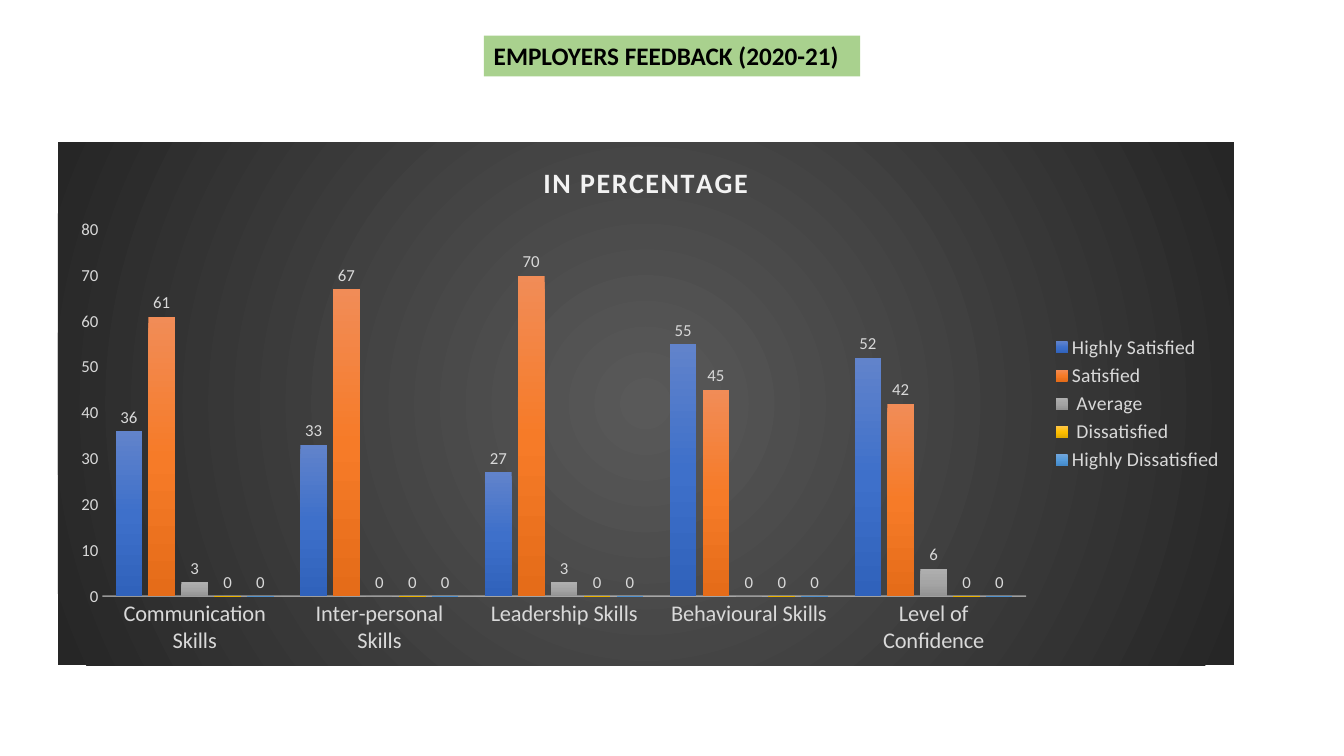
import pptx
import pptx.chart.data
import pptx.dml.color
import pptx.enum.chart
import pptx.enum.shapes
import pptx.enum.text
import pptx.oxml
import pptx.oxml.ns
import pptx.util

FONT = "Calibri"
PALE_GREY = "D9D9D9"
AXIS_GREY = "F2F2F2"
SLIDE_WIDTH = pptx.util.Inches(13.33)
SLIDE_HEIGHT = pptx.util.Inches(7.5)
NAMESPACES = pptx.oxml.ns.nsdecls("a", "c")

SKILLS = ["Communication Skills", "Inter-personal Skills", "Leadership Skills",
          "Behavioural Skills", "Level of Confidence"]
RATINGS = [
    ("Highly Satisfied", (36, 33, 27, 55, 52), ("6183CB", "3E70CA", "3062BB")),
    ("Satisfied", (61, 67, 70, 45, 42), ("F18C57", "F67B28", "E56C19")),
    (" Average", (3, 0, 3, 0, 6), ("AFAFAF", "A5A5A5", "939393")),
    (" Dissatisfied", (0, 0, 0, 0, 0), ("FFC64B", "FFC000", "E3AB00")),
    ("Highly Dissatisfied", (0, 0, 0, 0, 0), ("71A6DB", "559BDB", "448ACA")),
]


def color(value):
    return pptx.dml.color.RGBColor.from_string(value)


def share_box(left, top, width, height):
    return (int(left * SLIDE_WIDTH), int(top * SLIDE_HEIGHT),
            int(width * SLIDE_WIDTH), int(height * SLIDE_HEIGHT))


def format_font(font, size, fill=PALE_GREY, bold=False):
    font.name = FONT
    font.size = pptx.util.Pt(size)
    font.bold = bold
    font.color.rgb = color(fill)


def write_text(text_frame, text, **font_format):
    paragraph = text_frame.paragraphs[0]
    run = paragraph.add_run()
    run.text = text
    format_font(run.font, **font_format)
    return paragraph, run


def gradient_fill(colors, direction):
    last = len(colors) - 1
    stops = "".join(
        f'<a:gs pos="{100000 * index // last}"><a:srgbClr val="{value}"/></a:gs>'
        for index, value in enumerate(colors))
    return pptx.oxml.parse_xml(
        f'<a:gradFill {NAMESPACES} rotWithShape="1"><a:gsLst>{stops}</a:gsLst>'
        f'{direction}</a:gradFill>')


def fill_chart_background(chart):
    properties = pptx.oxml.parse_xml(
        f'<c:spPr {NAMESPACES}><a:ln><a:noFill/></a:ln></c:spPr>')
    center = ('<a:path path="circle">'
              '<a:fillToRect l="50000" t="50000" r="50000" b="50000"/></a:path>')
    properties.insert(0, gradient_fill(("595959", "262626"), center))
    chart.element.find(pptx.oxml.ns.qn("c:chart")).addnext(properties)


def add_heading(slide, text):
    shape = slide.shapes.add_shape(
        pptx.enum.shapes.MSO_SHAPE.RECTANGLE, *share_box(0.36, 0.047, 0.28, 0.054))
    shape.shadow.inherit = False
    shape.fill.solid()
    shape.fill.fore_color.rgb = color("A9D18E")
    shape.line.fill.background()
    text_frame = shape.text_frame
    text_frame.word_wrap = True
    text_frame.auto_size = pptx.enum.text.MSO_AUTO_SIZE.SHAPE_TO_FIT_TEXT
    text_frame.vertical_anchor = pptx.enum.text.MSO_ANCHOR.TOP
    paragraph, _ = write_text(text_frame, text, size=18, fill="000000", bold=True)
    paragraph.alignment = pptx.enum.text.PP_ALIGN.LEFT


def style_axes(chart):
    for axis, size in ((chart.category_axis, 16), (chart.value_axis, 12)):
        axis.has_major_gridlines = False
        axis.major_tick_mark = pptx.enum.chart.XL_TICK_MARK.NONE
        axis.minor_tick_mark = pptx.enum.chart.XL_TICK_MARK.NONE
        format_font(axis.tick_labels.font, size)
    chart.value_axis.minimum_scale = 0
    chart.value_axis.maximum_scale = 80
    chart.value_axis.major_unit = 10
    chart.value_axis.format.line.fill.background()
    line = chart.category_axis.format.line
    line.width = pptx.util.Pt(1)
    line.color.rgb = color(AXIS_GREY)
    line_color = chart.category_axis._element.find(
        ".//" + pptx.oxml.ns.qn("a:ln") + "//" + pptx.oxml.ns.qn("a:srgbClr"))
    line_color.append(pptx.oxml.parse_xml(f'<a:alpha {NAMESPACES} val="54000"/>'))


def style_series(series, colors):
    series.invert_if_negative = False
    series._element.get_or_add_spPr().append(
        gradient_fill(colors, '<a:lin ang="5400000" scaled="0"/>'))
    labels = series.data_labels
    labels.show_value = True
    labels.position = pptx.enum.chart.XL_LABEL_POSITION.OUTSIDE_END
    format_font(labels.font, 12)


def add_feedback_chart(slide):
    data = pptx.chart.data.CategoryChartData()
    data.categories = SKILLS
    for name, values, _ in RATINGS:
        data.add_series(name, values)
    frame = slide.shapes.add_chart(
        pptx.enum.chart.XL_CHART_TYPE.COLUMN_CLUSTERED,
        *share_box(0.043, 0.188, 0.875, 0.692), data)
    chart = frame.chart
    fill_chart_background(chart)
    format_font(chart.font, 10, "000000")
    chart.has_title = True
    _, title = write_text(chart.chart_title.text_frame, "IN PERCENTAGE",
                          size=20, fill=AXIS_GREY, bold=True)
    title.font._element.set("spc", "100")
    chart.chart_title.include_in_layout = False
    chart.has_legend = True
    chart.legend.position = pptx.enum.chart.XL_LEGEND_POSITION.RIGHT
    chart.legend.include_in_layout = False
    format_font(chart.legend.font, 14)
    plot = chart.plots[0]
    plot.vary_by_categories = False
    plot.gap_width = 100
    plot.overlap = -24
    for series, (_, _, colors) in zip(plot.series, RATINGS):
        style_series(series, colors)
    style_axes(chart)


def main():
    presentation = pptx.Presentation()
    presentation.slide_width = SLIDE_WIDTH
    presentation.slide_height = SLIDE_HEIGHT
    slide = presentation.slides.add_slide(presentation.slide_layouts[6])
    add_feedback_chart(slide)
    add_heading(slide, "EMPLOYERS FEEDBACK (2020-21)")
    presentation.save("out.pptx")


if __name__ == "__main__":
    main()
